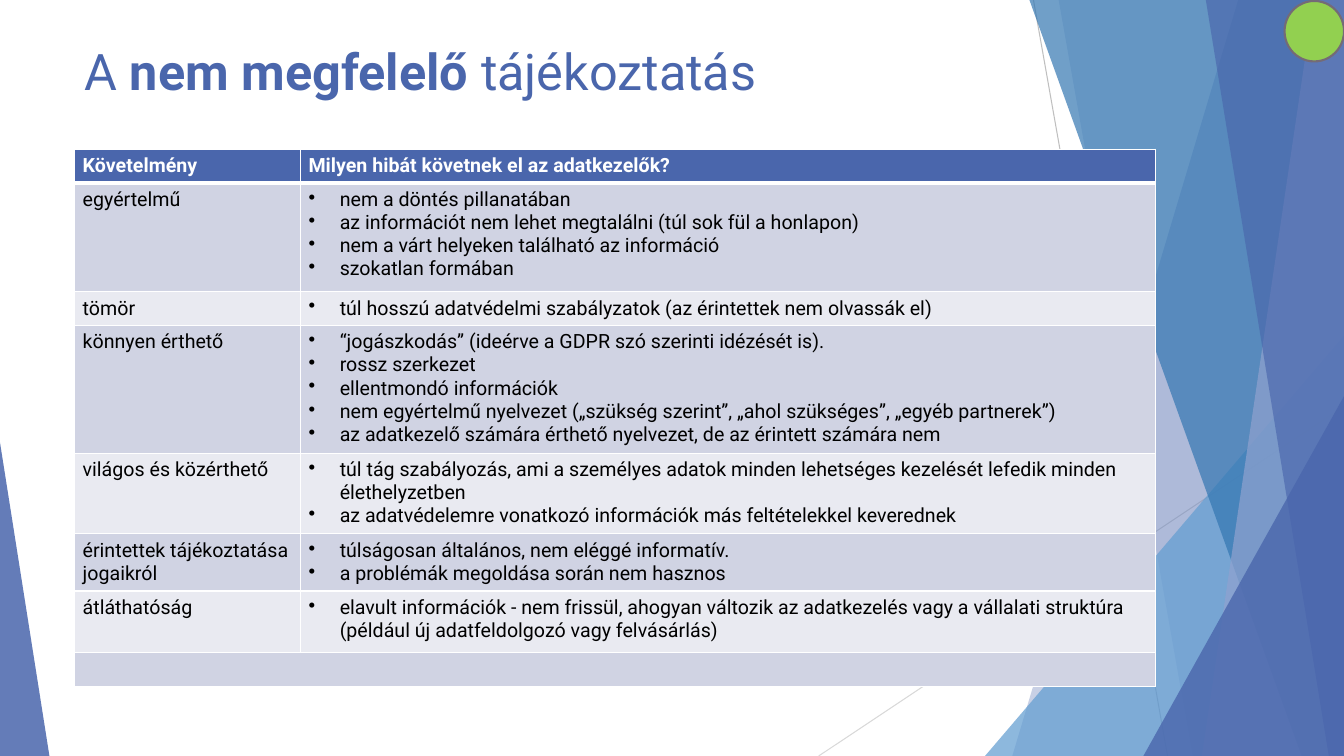
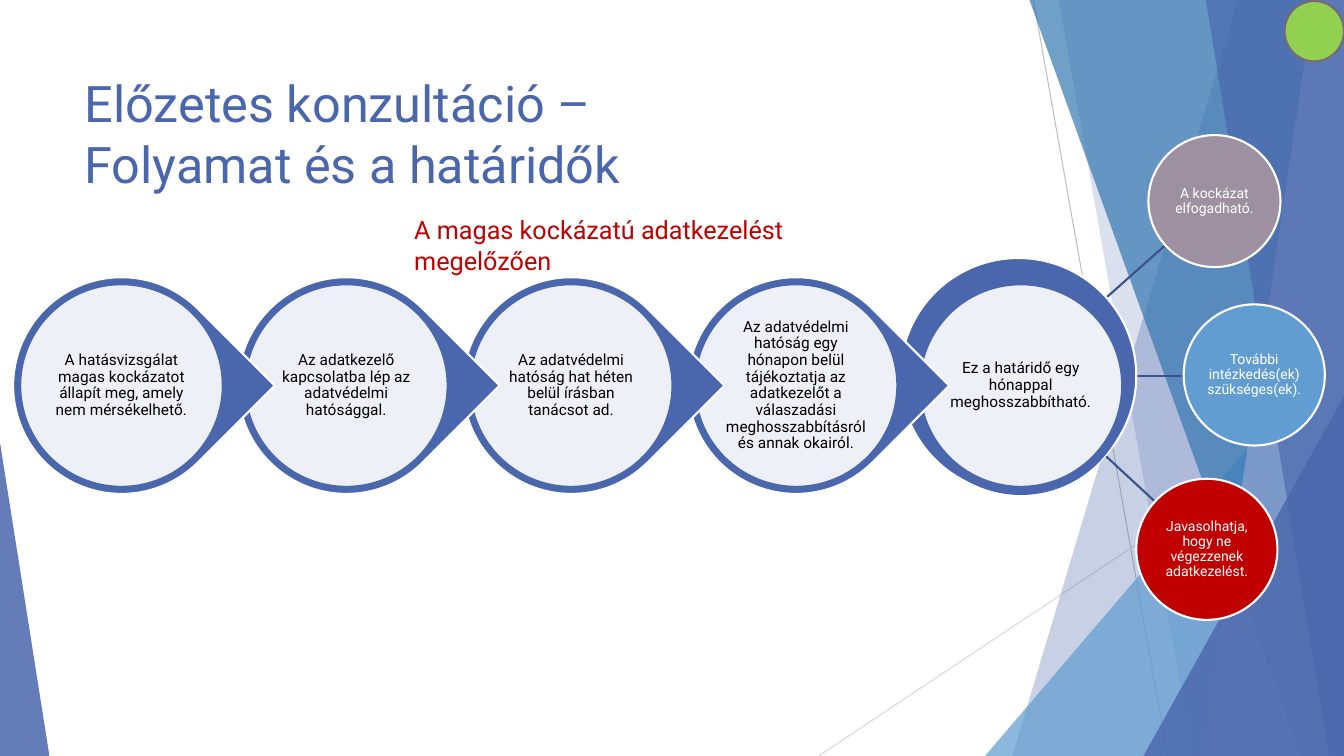
from dataclasses import dataclass
from typing import Optional

from pptx import Presentation
from pptx.dml.color import RGBColor
from pptx.enum.shapes import MSO_CONNECTOR, MSO_SHAPE
from pptx.enum.text import MSO_ANCHOR, PP_ALIGN
from pptx.oxml.ns import qn
from pptx.oxml.xmlchemy import OxmlElement
from pptx.util import Inches, Pt

FONT = "Roboto"
BLUE, SKY, DEEP, PALE = "4A66AC", "629DD1", "3477B2", "90A2CF"
WHITE, BLACK, RED, GREEN = "FFFFFF", "000000", "C00000", "92D050"
MAUVE, GREY, NAVY = "9D90A0", "746B76", "3B528A"
BANDS = ("D0D3E3", "E9EAF1")
W, H = 13.33, 7.5


@dataclass(frozen=True)
class Run:
    text: str
    bold: bool = False


@dataclass(frozen=True)
class Facet:
    top_left: float
    bottom_left: float
    colour: str
    alpha: int


@dataclass(frozen=True)
class Triangle:
    left: float
    top: float
    width: float
    apex: float
    colour: str
    alpha: int


@dataclass(frozen=True)
class Outcome:
    left: float
    top: float
    size: float
    colour: str
    text: str
    link: tuple[float, float, float, float]


@dataclass(frozen=True)
class Row:
    height: float
    label: str
    faults: tuple[str, ...]


BACKDROP = (
    Facet(12.28, 10.04, BLUE, 30),
    Facet(10.5, 11.83, BLUE, 20),
    Triangle(9.77, 3.33, 3.56, 1, SKY, 72),
    Facet(10.21, 12.91, DEEP, 70),
    Facet(13.03, 11.92, PALE, 70),
    Facet(11.96, 13.18, BLUE, 65),
    Triangle(11.34, 3.93, 1.99, 1, BLUE, 80),
    Triangle(0, 4.39, 0.49, 0, BLUE, 85),
)

HEADERS = ("Követelmény", "Milyen hibát követnek el az adatkezelők?")
ROWS = (
    Row(1.08, "egyértelmű", (
        "nem a döntés pillanatában",
        "az információt nem lehet megtalálni (túl sok fül a honlapon)",
        "nem a várt helyeken található az információ",
        "szokatlan formában")),
    Row(0.33, "tömör", (
        "túl hosszú adatvédelmi szabályzatok (az érintettek nem olvassák el)",)),
    Row(1.26, "könnyen érthető", (
        "“jogászkodás” (ideérve a GDPR szó szerinti idézését is).",
        "rossz szerkezet",
        "ellentmondó információk",
        "nem egyértelmű nyelvezet („szükség szerint”, „ahol szükséges”, „egyéb partnerek”)",
        "az adatkezelő számára érthető nyelvezet, de az érintett számára nem")),
    Row(0.8, "világos és közérthető", (
        "túl tág szabályozás, ami a személyes adatok minden lehetséges kezelését "
        "lefedik minden élethelyzetben",
        "az adatvédelemre vonatkozó információk más feltételekkel keverednek")),
    Row(0.56, "érintettek tájékoztatása jogaikról", (
        "túlságosan általános, nem eléggé informatív.",
        "a problémák megoldása során nem hasznos")),
    Row(0.61, "átláthatóság", (
        "elavult információk - nem frissül, ahogyan változik az adatkezelés vagy a "
        "vállalati struktúra (például új adatfeldolgozó vagy felvásárlás)",)),
)

STEPS = (
    "A hatásvizsgálat magas kockázatot állapít meg, amely nem mérsékelhető.",
    "Az adatkezelő kapcsolatba lép az adatvédelmi hatósággal.",
    "Az adatvédelmi hatóság hat héten belül írásban tanácsot ad.",
    "Az adatvédelmi hatóság egy hónapon belül tájékoztatja az adatkezelőt a "
    "válaszadási meghosszabbításról és annak okairól.",
    "Ez a határidő egy hónappal meghosszabbítható.",
)
OUTCOMES = (
    Outcome(11.39, 1.34, 1.31, MAUVE, "A kockázat elfogadható.", (10.92, 3, 11.56, 2.43)),
    Outcome(11.74, 3.02, 1.4, SKY, "További intézkedés(ek) szükséges(ek).",
            (10.92, 3.73, 11.74, 3.73)),
    Outcome(11.27, 4.75, 1.4, RED, "Javasolhatja, hogy ne végezzenek adatkezelést.",
            (10.92, 4.48, 11.46, 4.98)),
)


def rgb(colour: str) -> RGBColor:
    return RGBColor.from_string(colour)


def paint(sp, colour: str, alpha: int = 100, line: Optional[str] = None) -> None:
    sp.shadow.inherit = False
    sp.fill.solid()
    sp.fill.fore_color.rgb = rgb(colour)
    if alpha < 100:
        clr = sp._element.spPr.find(qn("a:solidFill")).find(qn("a:srgbClr"))
        el = OxmlElement("a:alpha")
        el.set("val", str(alpha * 1000))
        clr.append(el)
    if line:
        sp.line.color.rgb = rgb(line)
        sp.line.width = Pt(1.5)
    else:
        sp.line.fill.background()


def add_shape(slide, kind, left: float, top: float, width: float, height: float,
              colour: str, alpha: int = 100, line: Optional[str] = None):
    sp = slide.shapes.add_shape(kind, Inches(left), Inches(top), Inches(width), Inches(height))
    paint(sp, colour, alpha, line)
    return sp


def add_line(slide, x1: float, y1: float, x2: float, y2: float,
             colour: str, width: float) -> None:
    cx = slide.shapes.add_connector(MSO_CONNECTOR.STRAIGHT, Inches(x1), Inches(y1),
                                    Inches(x2), Inches(y2))
    cx.line.color.rgb = rgb(colour)
    cx.line.width = Pt(width)
    cx._element.spPr.append(OxmlElement("a:effectLst"))


def add_run(p, run: Run, size: float, colour: str) -> None:
    r = p.add_run()
    r.text = run.text
    r.font.name = FONT
    r.font.size = Pt(size)
    r.font.bold = run.bold
    r.font.color.rgb = rgb(colour)


def add_text(slide, left: float, top: float, width: float, height: float,
             lines: list[list[Run]], size: float, colour: str) -> None:
    tf = slide.shapes.add_textbox(Inches(left), Inches(top), Inches(width),
                                  Inches(height)).text_frame
    tf.word_wrap = True
    p = tf.paragraphs[0]
    for i, line in enumerate(lines):
        if i:
            p.add_line_break()
        for run in line:
            add_run(p, run, size, colour)


def add_disc(slide, left: float, top: float, size: float, colour: str, alpha: int,
             line: str, text: str, font_size: float, font_colour: str) -> None:
    tf = add_shape(slide, MSO_SHAPE.OVAL, left, top, size, size, colour, alpha, line).text_frame
    tf.word_wrap = True
    tf.vertical_anchor = MSO_ANCHOR.MIDDLE
    tf.margin_left = tf.margin_right = tf.margin_top = tf.margin_bottom = Inches(0.01)
    p = tf.paragraphs[0]
    p.alignment = PP_ALIGN.CENTER
    p.line_spacing = 0.9
    add_run(p, Run(text), font_size, font_colour)


def add_backdrop(slide) -> None:
    add_line(slide, 10.25, 0, 11.58, H, "BFBFBF", 0.75)
    add_line(slide, W, 4.03, 8.12, H, "D9D9D9", 0.75)
    for part in BACKDROP:
        if isinstance(part, Facet):
            fb = slide.shapes.build_freeform(Inches(part.top_left), 0)
            fb.add_line_segments([(Inches(W), 0), (Inches(W), Inches(H)),
                                  (Inches(part.bottom_left), Inches(H))])
            paint(fb.convert_to_shape(), part.colour, part.alpha)
        else:
            sp = add_shape(slide, MSO_SHAPE.ISOSCELES_TRIANGLE, part.left, part.top,
                           part.width, H - part.top, part.colour, part.alpha)
            sp.adjustments[0] = part.apex


def new_slide(prs):
    slide = prs.slides.add_slide(prs.slide_layouts[6])
    slide.background.fill.solid()
    slide.background.fill.fore_color.rgb = rgb(WHITE)
    add_backdrop(slide)
    return slide


def add_title(slide, top: float, width: float, height: float, lines: list[list[Run]]) -> None:
    add_text(slide, 0.74, top, width, height, lines, 36, BLUE)


def add_marker(slide) -> None:
    add_shape(slide, MSO_SHAPE.OVAL, 12.74, 0.01, 0.59, 0.6, GREEN, line=GREY)


def style_cell(cell, colour: str, bottom: float = 1) -> None:
    cell.margin_left = cell.margin_right = Inches(0.08)
    cell.margin_top = cell.margin_bottom = Inches(0.05)
    tc_pr = cell._tc.get_or_add_tcPr()
    for side, width in (("L", 1), ("R", 1), ("T", 1), ("B", bottom)):
        ln = OxmlElement(f"a:ln{side}")
        ln.set("w", str(Pt(width)))
        fill = OxmlElement("a:solidFill")
        clr = OxmlElement("a:srgbClr")
        clr.set("val", WHITE)
        fill.append(clr)
        ln.append(fill)
        tc_pr.append(ln)
    cell.fill.solid()
    cell.fill.fore_color.rgb = rgb(colour)


def add_bullet(p) -> None:
    p_pr = p._p.get_or_add_pPr()
    p_pr.set("marL", str(Inches(0.31)))
    p_pr.set("indent", str(-Inches(0.31)))
    bu = OxmlElement("a:buChar")
    bu.set("char", "•")
    p_pr.append(bu)


def add_fault_table(slide) -> None:
    heights = [0.33, *(row.height for row in ROWS), 0.33]
    tbl = slide.shapes.add_table(len(heights), 2, Inches(0.74), Inches(1.48),
                                 Inches(10.72), Inches(sum(heights))).table
    tbl.first_row = tbl.horz_banding = False
    for col, width in zip(tbl.columns, (2.24, 8.48)):
        col.width = Inches(width)
    for i, height in enumerate(heights):
        tbl.rows[i].height = Inches(height)
        for cell in tbl.rows[i].cells:
            style_cell(cell, BANDS[(i - 1) % 2] if i else BLUE, 1 if i else 3)
    for j, header in enumerate(HEADERS):
        add_run(tbl.cell(0, j).text_frame.paragraphs[0], Run(header, True), 14, WHITE)
    for i, row in enumerate(ROWS, 1):
        add_run(tbl.cell(i, 0).text_frame.paragraphs[0], Run(row.label), 14, BLACK)
        tf = tbl.cell(i, 1).text_frame
        for k, fault in enumerate(row.faults):
            p = tf.add_paragraph() if k else tf.paragraphs[0]
            add_bullet(p)
            add_run(p, Run(fault), 14, BLACK)
    last = len(heights) - 1
    for cell in tbl.rows[last].cells:
        end = OxmlElement("a:endParaRPr")
        end.set("sz", "1400")
        cell.text_frame.paragraphs[0]._p.append(end)
    tbl.cell(last, 0).merge(tbl.cell(last, 1))


def add_outcomes(slide) -> None:
    for o in OUTCOMES:
        add_line(slide, *o.link, NAVY, 1.5)
    add_shape(slide, MSO_SHAPE.OVAL, 8.93, 2.56, 2.34, 2.34, BLUE, line=WHITE)
    for o in OUTCOMES:
        add_disc(slide, o.left, o.top, o.size, o.colour, 100, WHITE, o.text, 10, WHITE)


def add_steps(slide) -> None:
    last = len(STEPS) - 1
    for i in range(last, -1, -1):
        left = 0.13 + i * 2.23
        kind, line = (MSO_SHAPE.OVAL, BLUE) if i == last else (MSO_SHAPE.TEAR, WHITE)
        sp = add_shape(slide, kind, left, 2.75, 2.15, 2.15, BLUE, line=line)
        if i < last:
            sp.rotation = 45
        add_disc(slide, left + 0.07, 2.82, 2.01, WHITE, 90, BLUE, STEPS[i], 11, BLACK)


def main() -> None:
    prs = Presentation()
    prs.slide_width, prs.slide_height = Inches(W), Inches(H)

    s = new_slide(prs)
    add_title(s, 0.35, 11.19, 1.11,
              [[Run("A "), Run("nem megfelelő ", True), Run("tájékoztatás")]])
    add_fault_table(s)
    add_marker(s)

    s = new_slide(prs)
    add_outcomes(s)
    add_title(s, 0.67, 9.4, 1.41,
              [[Run("Előzetes konzultáció –")], [Run("Folyamat és a határidők")]])
    add_steps(s)
    add_text(s, 4.01, 2.08, 4.4, 0.7,
             [[Run("A magas kockázatú adatkezelést megelőzően")]], 18, RED)
    add_marker(s)

    prs.save("out.pptx")


if __name__ == "__main__":
    main()
